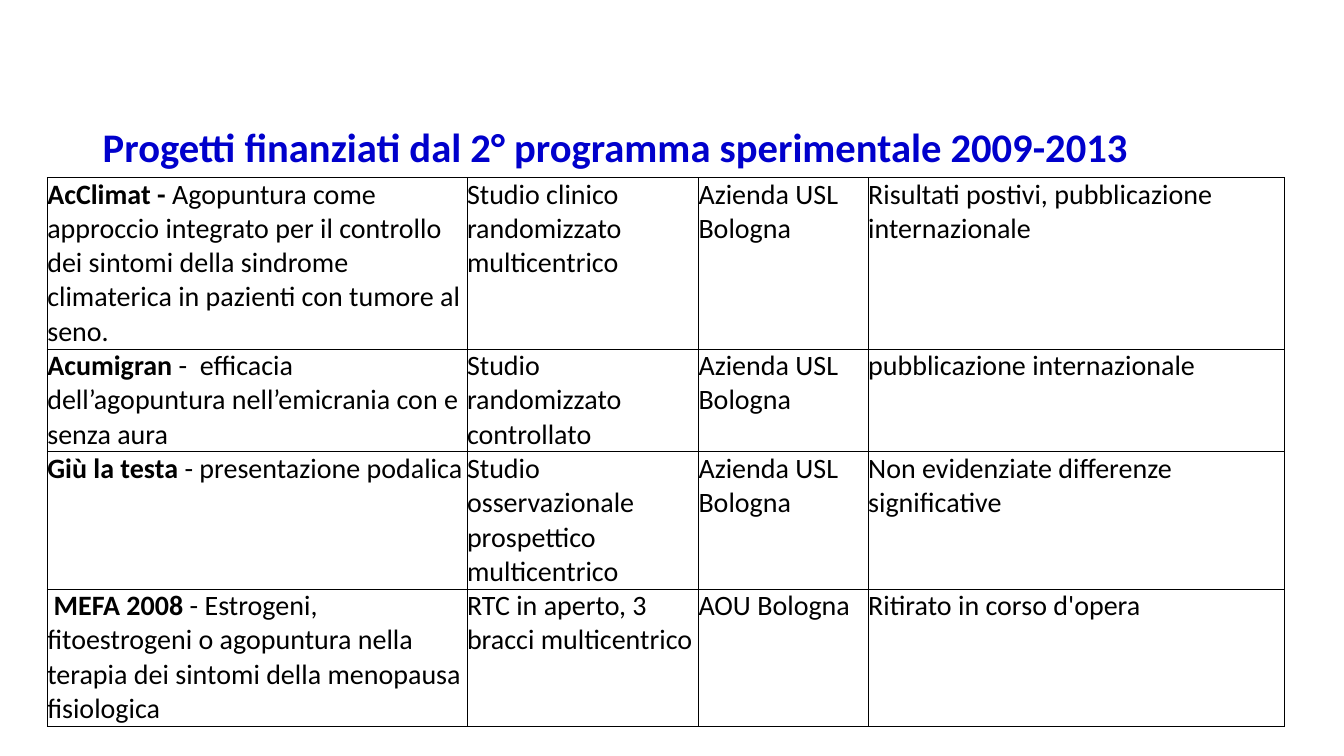
from dataclasses import dataclass

from lxml.etree import SubElement
from pptx import Presentation
from pptx.dml.color import RGBColor
from pptx.enum.text import MSO_ANCHOR, MSO_AUTO_SIZE, PP_ALIGN
from pptx.oxml.ns import qn
from pptx.util import Pt

COLORS = {"title": "0000CC", "text": "000000", "border": "000000"}
FONT = "Calibri"
LINE_HEIGHT = 24
COL_WIDTHS = (299.8, 165.4, 121.2, 297.6)


@dataclass
class Project:
    name: str
    topic: str
    design: str
    centre: str
    outcome: str
    lines: int


PROJECTS = [
    Project("AcClimat -",
            " Agopuntura come approccio integrato per il controllo dei sintomi "
            "della sindrome climaterica in pazienti con tumore al seno.",
            "Studio clinico randomizzato multicentrico", "Azienda USL Bologna",
            "Risultati postivi, pubblicazione internazionale", 5),
    Project("Acumigran", " -  efficacia dell’agopuntura nell’emicrania con e senza aura",
            "Studio randomizzato controllato", "Azienda USL Bologna",
            "pubblicazione internazionale", 3),
    Project("Giù la testa", " - presentazione podalica",
            "Studio osservazionale prospettico multicentrico", "Azienda USL Bologna",
            "Non evidenziate differenze significative", 4),
    Project(" MEFA 2008 ",
            "- Estrogeni, fitoestrogeni o agopuntura nella terapia dei sintomi "
            "della menopausa fisiologica",
            "RTC in aperto, 3 bracci multicentrico", "AOU Bologna",
            "Ritirato in corso d'opera", 4),
]


def add_run(p, text: str, size: float, color: str, bold: bool = False) -> None:
    r = p.add_run()
    r.text = text
    r.font.name = FONT
    r.font.size = Pt(size)
    r.font.bold = bold
    r.font.color.rgb = RGBColor.from_string(COLORS[color])


def add_borders(cell, width: float) -> None:
    tc_pr = cell._tc.get_or_add_tcPr()
    for side in ("a:lnL", "a:lnR", "a:lnT", "a:lnB"):
        ln = SubElement(tc_pr, qn(side), w=str(Pt(width)))
        fill = SubElement(ln, qn("a:solidFill"))
        SubElement(fill, qn("a:srgbClr"), val=COLORS["border"])


def fill_cell(cell, runs: list[tuple[str, bool]]) -> None:
    cell.margin_left = cell.margin_right = cell.margin_top = cell.margin_bottom = 0
    add_borders(cell, 0.5)
    cell.fill.background()
    p = cell.text_frame.paragraphs[0]
    for text, bold in runs:
        add_run(p, text, 20, "text", bold)


def add_title(s, text: str) -> None:
    sp = s.shapes.title
    sp.left, sp.top, sp.width, sp.height = Pt(66.2), Pt(80.6), Pt(828), Pt(52.6)
    tf = sp.text_frame
    tf.auto_size = MSO_AUTO_SIZE.NONE
    tf.word_wrap = True
    tf.vertical_anchor = MSO_ANCHOR.MIDDLE
    p = tf.paragraphs[0]
    p.alignment = PP_ALIGN.LEFT
    p.line_spacing = 0.9
    add_run(p, text, 29, "title", bold=True)


def add_projects(s, projects: list[Project]) -> None:
    height = LINE_HEIGHT * sum(project.lines for project in projects)
    table = s.shapes.add_table(len(projects), len(COL_WIDTHS), Pt(33.8), Pt(126.7),
                               Pt(sum(COL_WIDTHS)), Pt(height)).table
    table.first_row = table.horz_banding = False
    for column, width in zip(table.columns, COL_WIDTHS):
        column.width = Pt(width)
    for row, project in zip(table.rows, projects):
        row.height = Pt(LINE_HEIGHT * project.lines)
        contents = [[(project.name, True), (project.topic, False)]]
        contents += [[(text, False)]
                     for text in (project.design, project.centre, project.outcome)]
        for cell, runs in zip(row.cells, contents):
            fill_cell(cell, runs)


def main() -> None:
    prs = Presentation()
    prs.slide_width, prs.slide_height = Pt(960), Pt(540)
    s = prs.slides.add_slide(prs.slide_layouts[5])

    # Heading
    add_title(s, "Progetti finanziati dal 2° programma sperimentale 2009-2013")

    # Table of funded projects
    add_projects(s, PROJECTS)

    prs.save("out.pptx")


if __name__ == "__main__":
    main()
